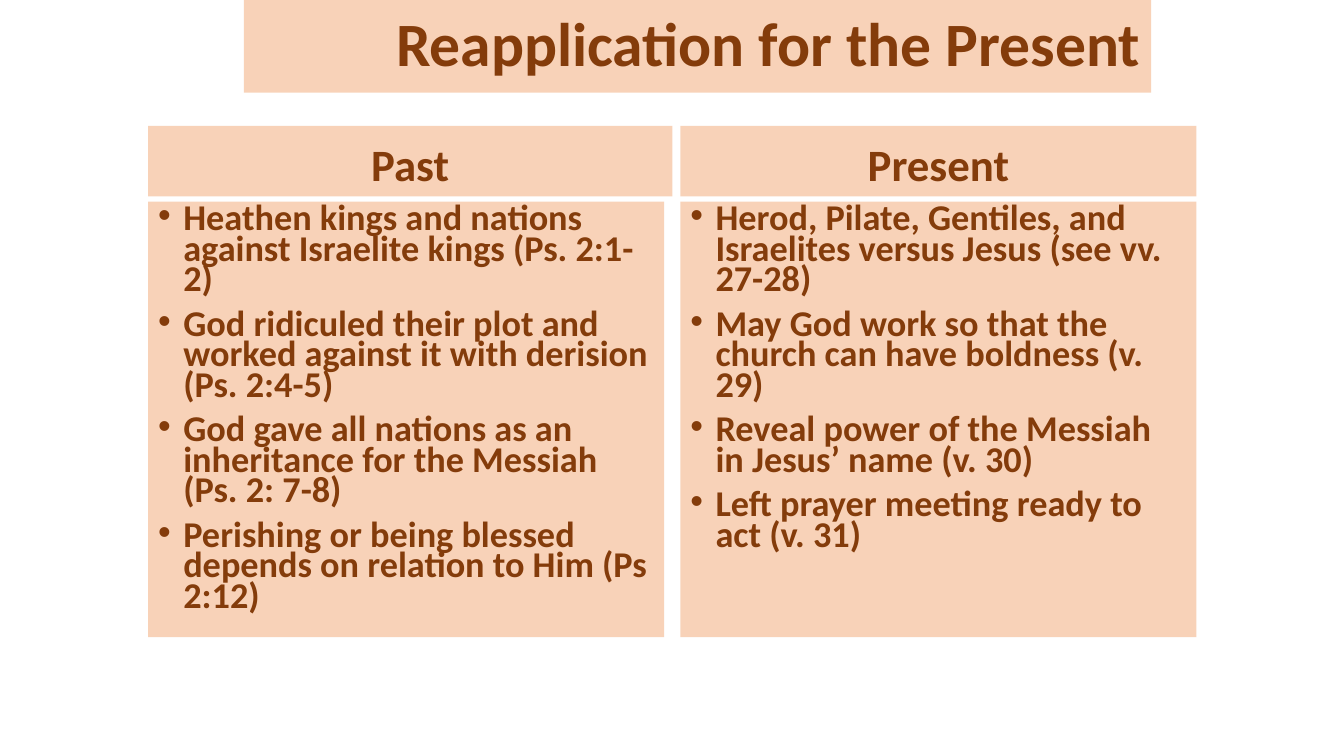
from lxml import etree
from pptx import Presentation
from pptx.dml.color import RGBColor
from pptx.enum import shapes, text
from pptx.oxml.ns import qn
from pptx.util import Pt

BROWN = "843C0B"
PEACH = "F4B183"
PEACH_ALPHA = 57
BULLET_INDENT = 18
HEADING_HEIGHT = 50.4
LIST_OFFSET = 54
LIST_WIDTH = 368.64

COLUMNS = [
    {
        "box": (105.84, 90, 374.4, 365.04),
        "heading": "Past",
        "points": [
            "Heathen kings and nations against Israelite kings (Ps. 2:1-2)",
            "God ridiculed their plot and worked against it with derision (Ps. 2:4-5)",
            "God gave all nations as an inheritance for the Messiah (Ps. 2: 7-8)",
            "Perishing or being blessed depends on relation to Him (Ps 2:12)",
        ],
    },
    {
        "box": (486, 90, LIST_WIDTH, 365.04),
        "heading": "Present",
        "points": [
            "Herod, Pilate, Gentiles, and Israelites versus Jesus (see vv. 27-28)",
            "May God work so that the church can have boldness (v. 29)",
            "Reveal power of the Messiah in Jesus’ name (v. 30)",
            "Left prayer meeting ready to act (v. 31)",
        ],
    },
]


def color(hex_string):
    return RGBColor.from_string(hex_string)


def set_attributes(target, values):
    for name, value in values.items():
        setattr(target, name, value)


def fill_peach(shape):
    shape.fill.solid()
    shape.fill.fore_color.rgb = color(PEACH)
    color_element = shape.fill._xPr.find(qn("a:solidFill"))[0]
    etree.SubElement(color_element, qn("a:alpha"), val=str(PEACH_ALPHA * 1000))


def add_bullet(paragraph):
    properties = paragraph._p.get_or_add_pPr()
    properties.set("marL", str(Pt(BULLET_INDENT)))
    properties.set("indent", str(-Pt(BULLET_INDENT)))
    etree.SubElement(properties, qn("a:buFont"), typeface="Arial")
    etree.SubElement(properties, qn("a:buChar"), char="•")


def write_paragraphs(shape, lines, size, anchor, alignment, spacing, bulleted=False):
    frame = shape.text_frame
    set_attributes(frame, {
        "word_wrap": True,
        "auto_size": text.MSO_AUTO_SIZE.NONE,
        "vertical_anchor": anchor,
        "margin_left": Pt(7.2),
        "margin_right": Pt(7.2),
        "margin_top": Pt(3.6),
        "margin_bottom": Pt(3.6),
    })
    for index, line in enumerate(lines):
        paragraph = frame.add_paragraph() if index else frame.paragraphs[0]
        if bulleted:
            add_bullet(paragraph)
        set_attributes(paragraph, {
            "alignment": alignment,
            "line_spacing": spacing,
            "space_before": Pt(10 if index else 0),
        })
        run = paragraph.add_run()
        run.text = line
        set_attributes(run.font, {"name": "Calibri", "size": Pt(size), "bold": True})
        run.font.color.rgb = color(BROWN)


def add_panel(slide, box):
    panel = slide.shapes.add_shape(shapes.MSO_SHAPE.RECTANGLE, *map(Pt, box))
    panel.shadow.inherit = False
    panel.line.fill.background()
    fill_peach(panel)
    return panel


def place_title(slide, box, title_text):
    title = slide.shapes.title
    set_attributes(title, dict(zip(("left", "top", "width", "height"), map(Pt, box))))
    fill_peach(title)
    write_paragraphs(title, [title_text], 44, text.MSO_ANCHOR.MIDDLE,
                     text.PP_ALIGN.RIGHT, 0.9)


def add_column(slide, box, heading, points):
    """Stack a heading panel above a bulleted panel inside the box."""
    left, top, width, height = box
    heading_panel = add_panel(slide, (left, top, width, HEADING_HEIGHT))
    write_paragraphs(heading_panel, [heading], 32, text.MSO_ANCHOR.BOTTOM,
                     text.PP_ALIGN.CENTER, 0.9)
    list_panel = add_panel(
        slide, (left, top + LIST_OFFSET, LIST_WIDTH, height - LIST_OFFSET))
    write_paragraphs(list_panel, points, 25.9, text.MSO_ANCHOR.TOP,
                     text.PP_ALIGN.LEFT, 0.7, bulleted=True)


def main():
    presentation = Presentation()
    presentation.slide_width = Pt(960)
    presentation.slide_height = Pt(540)
    title_only = presentation.slide_layouts.get_by_name("Title Only")
    slide = presentation.slides.add_slide(title_only)
    place_title(slide, (174.24, 0, 648, 66.24), "Reapplication for the Present")
    for column in COLUMNS:
        add_column(slide, **column)
    presentation.save("out.pptx")


if __name__ == "__main__":
    main()
